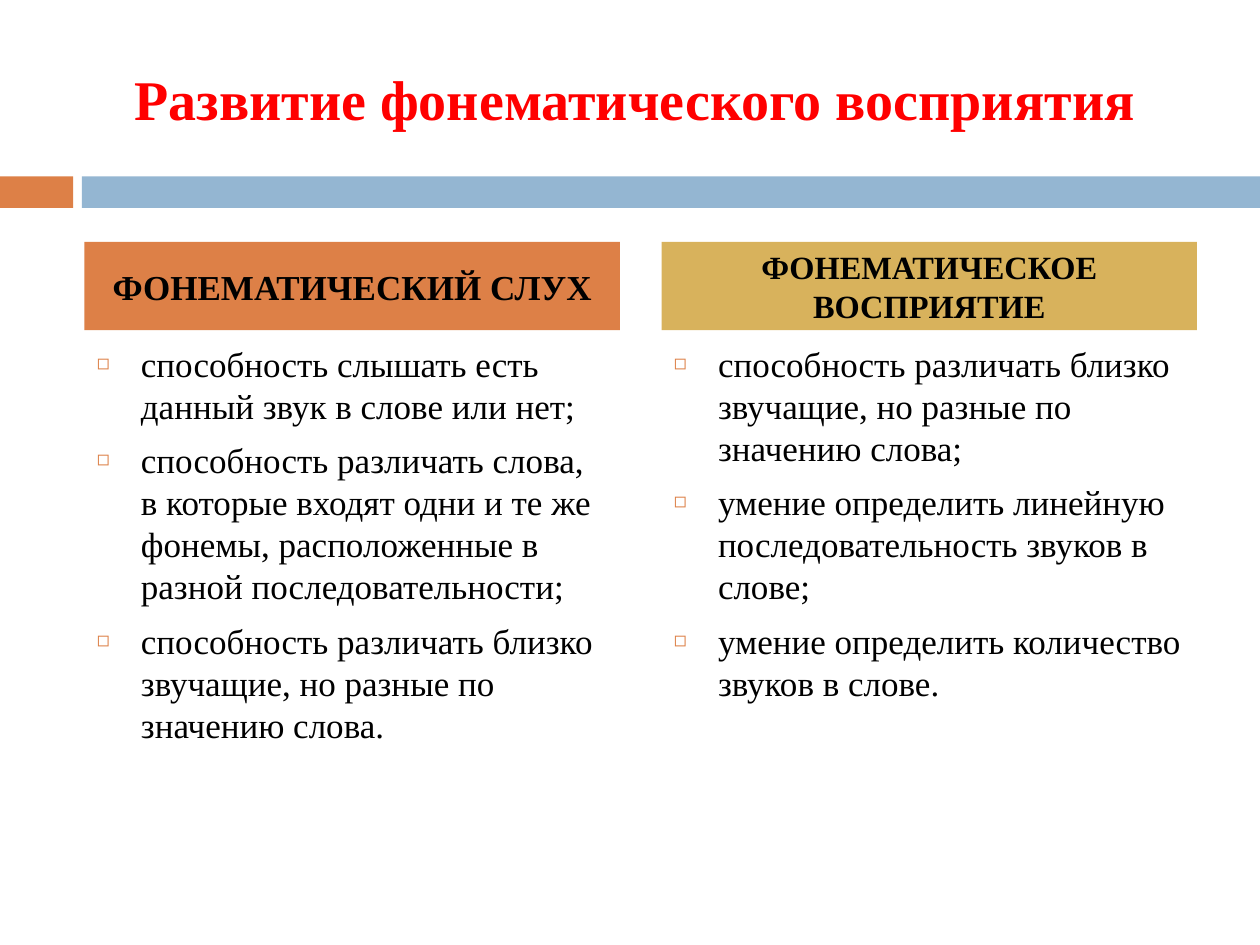
from dataclasses import dataclass

from lxml.etree import SubElement
from pptx import Presentation
from pptx.dml.color import RGBColor as Rgb
from pptx.enum.shapes import MSO_SHAPE as Shape
from pptx.enum.text import MSO_ANCHOR as Anchor, PP_ALIGN as Align
from pptx.oxml.ns import qn
from pptx.util import Inches, Pt


@dataclass(frozen=True)
class Theme:
    """Colours, font and type sizes of the slide."""
    font: str = "Times New Roman"
    red: str = "FF0000"
    black: str = "000000"
    orange: str = "DD8047"
    blue: str = "94B6D2"
    gold: str = "D8B25C"
    title: float = 32
    body: float = 20
    small: float = 18.5
    gap: float = 7


THEME = Theme()

COLUMNS = [
    ("ФОНЕМАТИЧЕСКИЙ СЛУХ", THEME.orange, THEME.body, [
        "способность слышать есть данный звук в слове или нет;",
        "способность различать слова, в которые входят одни и те же фонемы, "
        "расположенные в разной последовательности;",
        "способность различать близко звучащие, но разные по значению слова.",
    ]),
    ("ФОНЕМАТИЧЕСКОЕ ВОСПРИЯТИЕ", THEME.gold, THEME.small, [
        "способность различать близко звучащие, но разные по значению слова;",
        "умение определить линейную последовательность звуков в слове;",
        "умение определить количество звуков в слове.",
    ]),
]


def add_rect(slide, box, fill):
    """Add a plain filled rectangle."""
    rect = slide.shapes.add_shape(Shape.RECTANGLE, *map(Inches, box))
    rect.shadow.inherit = False
    rect.fill.solid()
    rect.fill.fore_color.rgb = Rgb.from_string(fill)
    rect.line.fill.background()
    return rect


def add_run(para, text, size, color=THEME.black, bold=False):
    """Add one styled run to a paragraph."""
    run = para.add_run()
    run.text = text
    font = run.font
    font.name, font.size, font.bold = THEME.font, Pt(size), bold
    font.color.rgb = Rgb.from_string(color)


def set_bullet(para):
    """Give a paragraph a hanging square bullet."""
    props = para._p.get_or_add_pPr()
    indent = Inches(0.35)
    props.set("marL", str(indent))
    props.set("indent", str(-indent))
    color = SubElement(props, qn("a:buClr"))
    SubElement(color, qn("a:srgbClr"), val=THEME.orange)
    SubElement(props, qn("a:buSzPct"), val="60000")
    SubElement(props, qn("a:buFont"), typeface=THEME.font)
    SubElement(props, qn("a:buChar"), char="◻")


def add_title(slide, box, text):
    """Place the centred slide title."""
    frame = slide.shapes.add_textbox(*map(Inches, box)).text_frame
    frame.word_wrap = True
    frame.vertical_anchor = Anchor.MIDDLE
    para = frame.paragraphs[0]
    para.alignment = Align.CENTER
    add_run(para, text, THEME.title, THEME.red, True)


def add_band(slide, box):
    """Place the two-colour band, split near its left end."""
    left, top, width, height = box
    stub, start = 0.58, 0.65
    add_rect(slide, (left, top, stub, height), THEME.orange)
    add_rect(slide, (left + start, top, width - start, height), THEME.blue)


def add_head(slide, box, text, fill, size):
    """Place the coloured heading of a column."""
    frame = add_rect(slide, box, fill).text_frame
    frame.word_wrap = True
    frame.vertical_anchor = Anchor.MIDDLE
    para = frame.paragraphs[0]
    para.alignment = Align.CENTER
    para.space_before = Pt(THEME.gap)
    add_run(para, text, size, bold=True)


def add_list(slide, box, items):
    """Place a bulleted list."""
    frame = slide.shapes.add_textbox(*map(Inches, box)).text_frame
    frame.word_wrap = True
    for index, item in enumerate(items):
        para = frame.add_paragraph() if index else frame.paragraphs[0]
        para.space_before = Pt(THEME.gap)
        set_bullet(para)
        add_run(para, item, THEME.body)


def add_column(slide, box, head, fill, size, items):
    """Place a heading with its list below."""
    left, top, width, height = box
    tall, step = 0.7, 0.75
    add_head(slide, (left, top, width, tall), head, fill, size)
    add_list(slide, (left, top + step, width, height - step), items)


def main():
    """Build and save the slide."""
    deck = Presentation()
    deck.slide_width, deck.slide_height = Inches(10), Inches(7.5)
    slide = deck.slides.add_slide(deck.slide_layouts[6])
    add_band(slide, (0, 1.4, 10, 0.25))
    add_title(slide, (0.58, 0.3, 8.92, 0.95),
              "Развитие фонематического восприятия")
    for index, column in enumerate(COLUMNS):
        add_column(slide, (0.67 + index * 4.58, 1.92, 4.25, 4.67), *column)
    deck.save("out.pptx")


if __name__ == "__main__":
    main()
